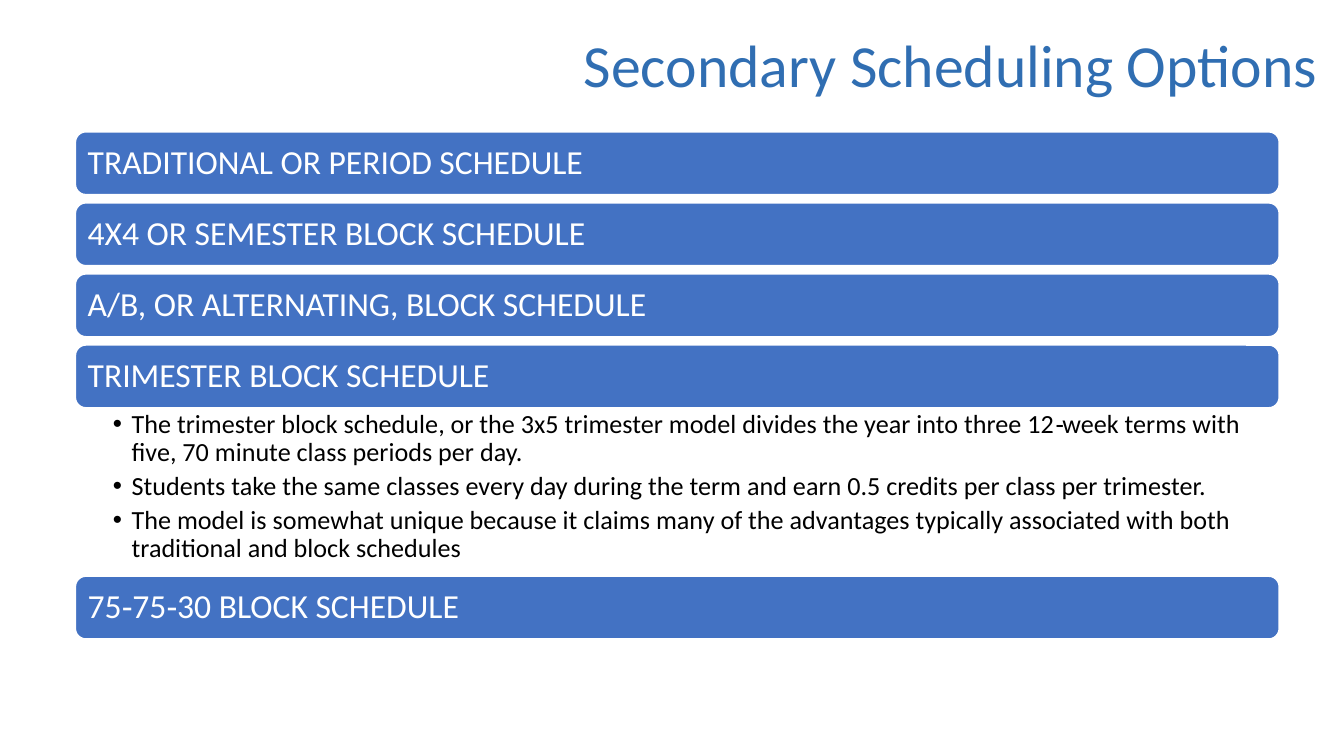
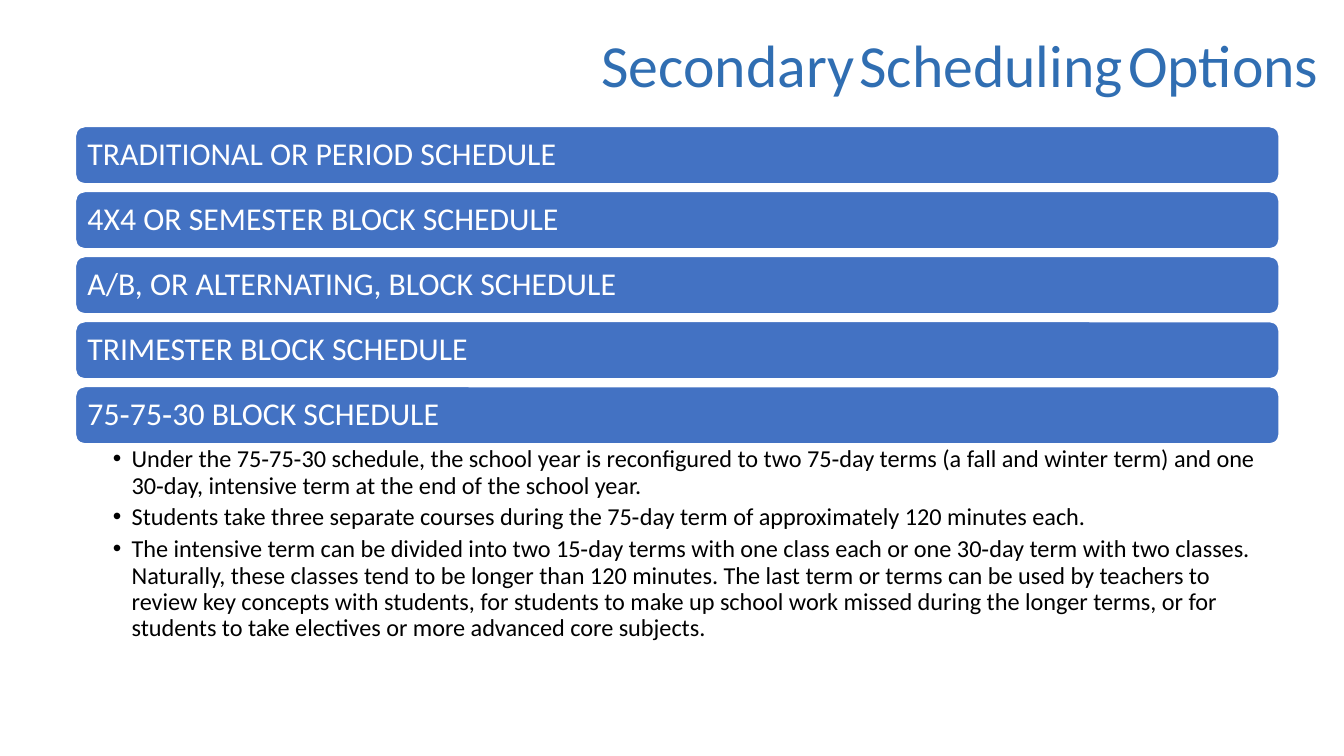
from dataclasses import dataclass

from pptx import Presentation
from pptx import util as u
from pptx.dml.color import RGBColor
from pptx.enum import shapes, text
from pptx.oxml import ns
from lxml import etree


@dataclass(frozen=True)
class Theme:
    font: str = "Calibri"
    title_color: str = "306EB2"
    bar_color: str = "4372C3"
    light: str = "FFFFFF"
    dark: str = "000000"
    title_size: int = 32
    title_space_size: int = 11
    line_spacing: float = 0.9
    bullet_gap: int = 3
    left: float = 0.56
    width: float = 8.96


def apply(target, values):
    for name, value in values.items():
        setattr(target, name, value)


class ScheduleDeck:
    def __init__(self, theme):
        self.theme = theme
        self.deck = Presentation()
        # Widescreen, 16:9
        apply(self.deck, {"slide_width": u.Inches(10),
                          "slide_height": u.Inches(10 * 9 / 16)})
        self.slide = None

    def new_slide(self):
        self.slide = self.deck.slides.add_slide(self.deck.slide_layouts[5])

    def format_font(self, font, size, color):
        apply(font, {"name": self.theme.font, "size": u.Pt(size)})
        font.color.rgb = RGBColor.from_string(color)

    def format_frame(self, frame, anchor, insets):
        sides = ("margin_left", "margin_top", "margin_right", "margin_bottom")
        apply(frame, {"word_wrap": True, "auto_size": text.MSO_AUTO_SIZE.NONE,
                      "vertical_anchor": anchor})
        apply(frame, {side: u.Inches(inset) for side, inset in zip(sides, insets)})

    def title(self, runs):
        """Right-aligned title from (wording, size, color) runs."""
        heading = self.slide.shapes.title
        apply(heading, {"left": u.Inches(2.06), "top": u.Inches(0.09),
                        "width": u.Inches(7.82), "height": u.Inches(0.83)})
        self.format_frame(heading.text_frame, text.MSO_ANCHOR.MIDDLE,
                          (0.07, 0.04, 0.07, 0.04))
        line = heading.text_frame.paragraphs[0]
        apply(line, {"alignment": text.PP_ALIGN.RIGHT,
                     "line_spacing": self.theme.line_spacing})
        for wording, size, color in runs:
            run = line.add_run()
            run.text = wording
            self.format_font(run.font, size, color)

    def bar(self, wording, top, height, size):
        theme = self.theme
        bar = self.slide.shapes.add_shape(
            shapes.MSO_SHAPE.ROUNDED_RECTANGLE, u.Inches(theme.left), u.Inches(top),
            u.Inches(theme.width), u.Inches(height))
        bar.adjustments[0] = 0.17
        bar.shadow.inherit = False
        bar.fill.solid()
        bar.fill.fore_color.rgb = RGBColor.from_string(theme.bar_color)
        bar.line.color.rgb = RGBColor.from_string(theme.light)
        bar.line.width = u.Pt(1)
        self.format_frame(bar.text_frame, text.MSO_ANCHOR.MIDDLE, (0.07,) * 4)
        line = bar.text_frame.paragraphs[0]
        apply(line, {"text": wording, "alignment": text.PP_ALIGN.LEFT,
                     "line_spacing": theme.line_spacing})
        self.format_font(line.font, size, theme.light)

    def details(self, points, top, height, size):
        theme = self.theme
        box = self.slide.shapes.add_textbox(
            u.Inches(theme.left), u.Inches(top), u.Inches(theme.width), u.Inches(height))
        frame = box.text_frame
        self.format_frame(frame, text.MSO_ANCHOR.TOP, (0.28, 0.02, 0.14, 0.02))
        for number, point in enumerate(points):
            line = frame.add_paragraph() if number else frame.paragraphs[0]
            apply(line, {"text": point, "level": 1, "line_spacing": theme.line_spacing})
            if number:
                line.space_before = u.Pt(theme.bullet_gap)
            self.bullet(line)
            self.format_font(line.font, size, theme.dark)

    def bullet(self, line):
        props = line._p.get_or_add_pPr()
        indent = u.Inches(0.14)
        props.set("marL", str(indent))
        props.set("indent", str(-indent))
        color = etree.SubElement(props, ns.qn("a:buClr"))
        etree.SubElement(color, ns.qn("a:srgbClr"), val=self.theme.dark)
        etree.SubElement(props, ns.qn("a:buFont"), typeface="Arial")
        etree.SubElement(props, ns.qn("a:buChar"), char="•")

    def schedule_list(self, opened, points, top, bar_height, bar_size,
                      details_height, details_size):
        """Stack the bars, with the details right below the opened one."""
        gap = bar_height / 8
        for schedule in SCHEDULES:
            self.bar(schedule, top, bar_height, bar_size)
            top += bar_height
            if schedule == opened:
                self.details(points, top, details_height, details_size)
                top += details_height
            else:
                top += gap


SCHEDULES = (
    "TRADITIONAL OR PERIOD SCHEDULE",
    "4X4 OR SEMESTER BLOCK SCHEDULE",
    "A/B, OR ALTERNATING, BLOCK SCHEDULE",
    "TRIMESTER BLOCK SCHEDULE",
    "75‐75‐30 BLOCK SCHEDULE",
)
TRIMESTER, INTENSIVE = SCHEDULES[3:]
TITLE = "Secondary Scheduling Options"
TRIMESTER_POINTS = (
    "The trimester block schedule, or the 3x5 trimester model divides the year into "
    "three 12‐week terms with five, 70 minute class periods per day.",
    "Students take the same classes every day during the term and earn 0.5 credits "
    "per class per trimester.",
    "The model is somewhat unique because it claims many of the advantages typically "
    "associated with both traditional and block schedules",
)
INTENSIVE_POINTS = (
    "Under the 75‐75‐30 schedule, the school year is reconfigured to two 75‐day terms "
    "(a fall and winter term) and one 30‐day, intensive term at the end of the school year.",
    "Students take three separate courses during the 75‐day term of approximately "
    "120 minutes each.",
    "The intensive term can be divided into two 15‐day terms with one class each or one "
    "30‐day term with two classes. Naturally, these classes tend to be longer than 120 "
    "minutes. The last term or terms can be used by teachers to review key concepts with "
    "students, for students to make up school work missed during the longer terms, or for "
    "students to take electives or more advanced core subjects.",
)


def main():
    theme = Theme()
    show = ScheduleDeck(theme)

    # Trimester schedule
    show.new_slide()
    show.title([(TITLE, theme.title_size, theme.title_color)])
    show.schedule_list(TRIMESTER, TRIMESTER_POINTS, top=0.98, bar_height=0.47,
                       bar_size=18, details_height=1.25, details_size=14)

    # 75-75-30 schedule, with narrow spaces in its title
    show.new_slide()
    narrow_space = (" ", theme.title_space_size, theme.dark)
    title_runs = []
    for word in TITLE.split():
        title_runs += [narrow_space, (word, theme.title_size, theme.title_color)]
    show.title(title_runs[1:])
    show.schedule_list(INTENSIVE, INTENSIVE_POINTS, top=0.94, bar_height=0.43,
                       bar_size=17, details_height=1.49, details_size=13)

    show.deck.save("out.pptx")


if __name__ == "__main__":
    main()
